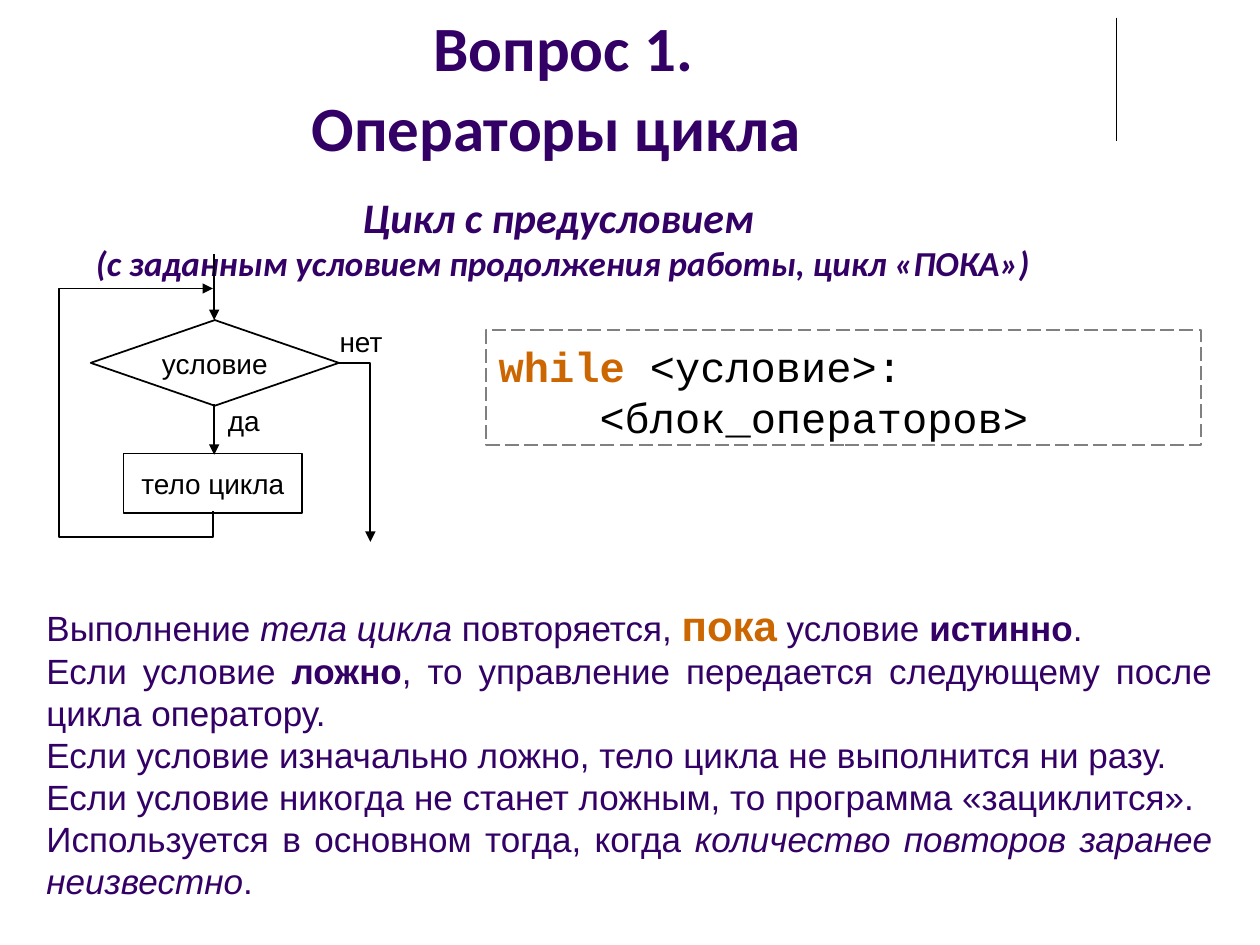
from dataclasses import dataclass

from lxml.etree import SubElement
from pptx import Presentation
from pptx.dml.color import RGBColor
from pptx.enum.dml import MSO_LINE
from pptx.enum.shapes import MSO_CONNECTOR, MSO_SHAPE
from pptx.enum.text import MSO_ANCHOR, PP_ALIGN
from pptx.oxml.ns import qn
from pptx.util import Inches, Pt


@dataclass(frozen=True)
class Theme:
    ink: RGBColor = RGBColor(0x33, 0x00, 0x66)
    accent: RGBColor = RGBColor(0xCC, 0x66, 0x00)
    black: RGBColor = RGBColor(0, 0, 0)
    white: RGBColor = RGBColor(255, 255, 255)
    gray: RGBColor = RGBColor(0x80, 0x80, 0x80)
    heading_font: str = "Calibri"
    body_font: str = "Arial"
    code_font: str = "Courier New"
    title: float = 36
    subtitle: float = 24
    body: float = 20
    emphasis: float = 24
    label: float = 16
    stroke: float = 1


THEME = Theme()
ITALIC = {"italic": True}
BOLD = {"bold": True}
ACCENT = {"bold": True, "size": Pt(THEME.emphasis), "color": THEME.accent}

# Text, size, italic, space before
TITLE_LINES = [
    ("Вопрос 1.", THEME.title, False, 0),
    ("Операторы цикла ", THEME.title, False, 2.5),
    ("Цикл с предусловием ", THEME.subtitle, True, 15.5),
    ("(с заданным условием продолжения работы, цикл «ПОКА»)", THEME.body, True, 0),
]
EXPLANATION = [
    [("Выполнение ", {}), ("тела цикла", ITALIC), (" повторяется, ", {}),
     ("пока", ACCENT), (" условие ", {}), ("истинно", BOLD), (".", {})],
    [("Если условие ", {}), ("ложно", BOLD),
     (", то управление передается следующему после цикла оператору.", {})],
    [("Если условие изначально ложно, тело цикла не выполнится ни разу.", {})],
    [("Если условие никогда не станет ложным, то программа «зациклится».", {})],
    [("Используется в основном тогда, когда ", {}),
     ("количество повторов заранее неизвестно", ITALIC), (".", {})],
]
CODE = [
    [("while", ACCENT), (" <условие>:", {})],
    [("    <блок_операторов>", {})],
]


def set_font(font, name, size, color):
    font.name = name
    font.size = Pt(size)
    font.color.rgb = color


def add_textbox(slide, left, top, width, height):
    shape = slide.shapes.add_textbox(*map(Inches, (left, top, width, height)))
    shape.text_frame.word_wrap = True
    return shape


def next_paragraph(frame, index):
    return frame.add_paragraph() if index else frame.paragraphs[0]


def fill_rich_text(frame, lines, align, name, size, color, spacings):
    """Write paragraphs of (text, overrides) runs with exact line spacing in points."""
    for index, (runs, spacing) in enumerate(zip(lines, spacings)):
        paragraph = next_paragraph(frame, index)
        paragraph.alignment = align
        paragraph.line_spacing = Pt(spacing)
        set_font(paragraph.font, name, size, color)
        for text, overrides in runs:
            run = paragraph.add_run()
            run.text = text
            set_font(run.font, name, size, color)
            for key, value in overrides.items():
                if key == "color":
                    run.font.color.rgb = value
                else:
                    setattr(run.font, key, value)


def fill_label(frame, text, anchor=MSO_ANCHOR.TOP):
    frame.margin_left = frame.margin_right = frame.margin_top = frame.margin_bottom = 0
    frame.vertical_anchor = anchor
    paragraph = frame.paragraphs[0]
    paragraph.text = text
    paragraph.alignment = PP_ALIGN.CENTER
    set_font(paragraph.font, THEME.body_font, THEME.label, THEME.black)


def add_title(slide):
    frame = add_textbox(slide, 0.12, 0.02, 8.7, 2.3).text_frame
    for index, (text, size, italic, space) in enumerate(TITLE_LINES):
        paragraph = next_paragraph(frame, index)
        paragraph.text = text
        paragraph.alignment = PP_ALIGN.CENTER
        paragraph.space_before = Pt(space)
        set_font(paragraph.font, THEME.heading_font, size, THEME.ink)
        paragraph.font.bold = True
        paragraph.font.italic = italic


def add_explanation(slide):
    frame = add_textbox(slide, 0.27, 4.69, 9.45, 2.52).text_frame
    fill_rich_text(frame, EXPLANATION, PP_ALIGN.JUSTIFY, THEME.body_font,
                   THEME.body, THEME.ink, [30] + [24] * 4)


def add_code(slide):
    shape = add_textbox(slide, 3.86, 2.62, 5.67, 0.91)
    shape.line.color.rgb = THEME.gray
    shape.line.width = Pt(THEME.stroke)
    shape.line.dash_style = MSO_LINE.LONG_DASH
    shape.text_frame.margin_top = Inches(0.08)
    fill_rich_text(shape.text_frame, CODE, PP_ALIGN.LEFT, THEME.code_font,
                   THEME.emphasis, THEME.black, [29, 29])


def style_line(shape, width=THEME.stroke, arrow=True):
    shape.line.color.rgb = THEME.black
    shape.line.width = Pt(width)
    if arrow:
        SubElement(shape.line._get_or_add_ln(), qn("a:tailEnd"), type="triangle")


def add_line(slide, start, end, **style):
    connector = slide.shapes.add_connector(
        MSO_CONNECTOR.STRAIGHT, *map(Inches, start + end))
    style_line(connector, **style)
    SubElement(connector._element.spPr, qn("a:effectLst"))


def add_arrow_path(slide, points):
    corners = [tuple(map(Inches, point)) for point in points]
    builder = slide.shapes.build_freeform(*corners[0])
    builder.add_line_segments(corners[1:], close=False)
    shape = builder.convert_to_shape()
    shape.shadow.inherit = False
    shape.fill.background()
    style_line(shape)


def add_block(slide, kind, text, left, top, width, height):
    shape = slide.shapes.add_shape(kind, *map(Inches, (left, top, width, height)))
    shape.shadow.inherit = False
    shape.fill.solid()
    shape.fill.fore_color.rgb = THEME.white
    style_line(shape, arrow=False)
    fill_label(shape.text_frame, text, MSO_ANCHOR.MIDDLE)


def add_flowchart(slide):
    axis = 1.7
    add_line(slide, (axis, 2.02), (axis, 2.54))
    add_block(slide, MSO_SHAPE.FLOWCHART_DECISION, "условие", 0.72, 2.54, 1.97, 0.68)
    add_block(slide, MSO_SHAPE.RECTANGLE, "тело цикла", 0.98, 3.6, 1.42, 0.47)
    add_arrow_path(slide, [(2.68, 2.88), (2.94, 2.88), (2.94, 4.3)])
    for text, left, top in [("да", 1.65, 3.2), ("нет", 2.58, 2.58)]:
        fill_label(add_textbox(slide, left, top, 0.57, 0.33).text_frame, text)
    add_line(slide, (axis, 3.21), (axis, 3.61))
    add_arrow_path(slide, [(1.69, 4.06), (1.69, 4.26), (0.47, 4.26),
                           (0.47, 2.29), (1.69, 2.29)])


def main():
    presentation = Presentation()
    presentation.slide_width = Inches(10)
    presentation.slide_height = Inches(7.5)
    slide = presentation.slides.add_slide(presentation.slide_layouts[6])
    add_line(slide, (8.86, 0.14), (8.86, 1.12), width=0.75, arrow=False)
    add_title(slide)
    add_explanation(slide)
    add_code(slide)
    add_flowchart(slide)
    presentation.save("out.pptx")


if __name__ == "__main__":
    main()
